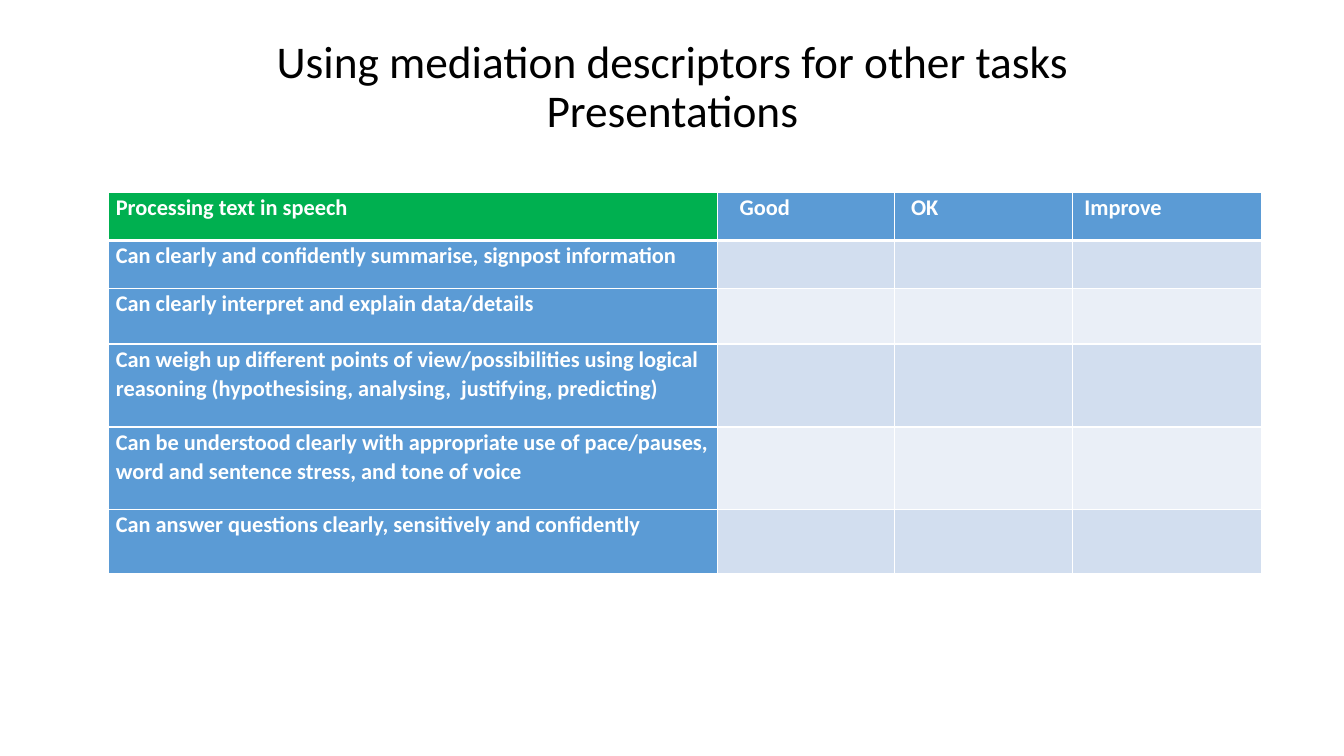
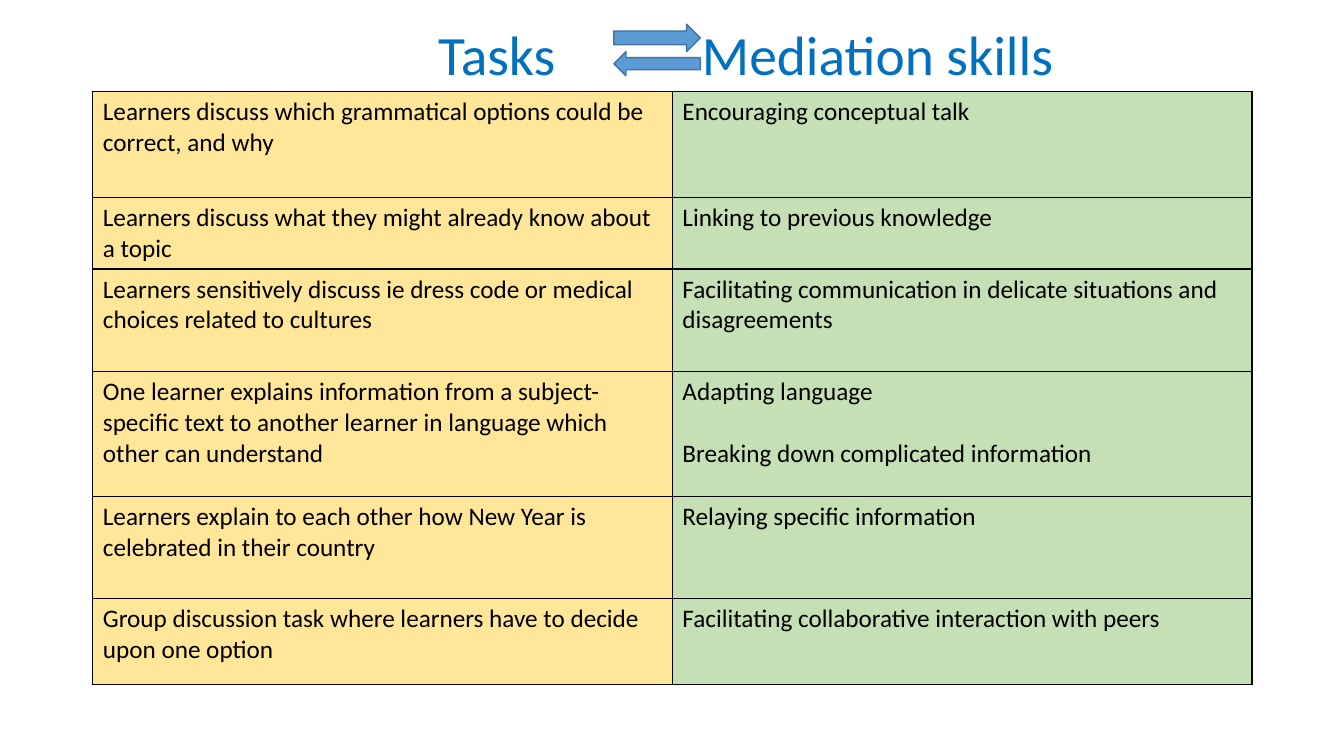
from collections import namedtuple

from lxml import etree
from pptx import Presentation
from pptx import util as u
from pptx.dml.color import RGBColor
from pptx.enum import shapes, text
from pptx.oxml import ns

Box = namedtuple("Box", "left top width height")
Border = namedtuple("Border", "color points")

FONT = "Calibri"
BLACK, WHITE = "000000", "FFFFFF"
BLUE, DARK_BLUE, TITLE_BLUE = "5B9BD5", "43739E", "0070C0"
GREEN, PALE_GREEN, YELLOW = "00B050", "C5E0B4", "FFE699"
BANDS = ["D2DEEF", "EAEFF7"]
TITLE_LEFT, TITLE_WIDTH = 2.34, 29.21

RATINGS = [("Good", 0.56), ("OK", 0.41), ("Improve", 0.31)]
DESCRIPTORS = [
    ("Can clearly and confidently summarise, signpost information", 1.21),
    ("Can clearly interpret and explain data/details", 1.4),
    ("Can weigh up different points of view/possibilities using logical "
     "reasoning (hypothesising, analysing,  justifying, predicting)", 2.09),
    ("Can be understood clearly with appropriate use of pace/pauses, "
     "word and sentence stress, and tone of voice", 2.08),
    ("Can answer questions clearly, sensitively and confidently", 1.62),
]
TASKS = [
    ("Learners discuss which grammatical options could be correct, and why",
     "Encouraging conceptual talk", 2.66),
    ("Learners discuss what they might already know about a topic",
     "Linking to previous knowledge", 1.81),
    ("Learners sensitively discuss ie dress code or medical choices related to cultures",
     "Facilitating communication in delicate situations and disagreements", 2.58),
    ("One learner explains information from a subject-specific text to another "
     "learner in language which other can understand",
     "Adapting language\nBreaking down complicated information", 3.15),
    ("Learners explain to each other how New Year is celebrated in their country",
     "Relaying specific information", 2.57),
    ("Group discussion task where learners have to decide upon one option",
     "Facilitating collaborative interaction with peers", 2.17),
]


def rgb(color):
    return RGBColor.from_string(color)


def fill_solid(target, color):
    target.fill.solid()
    target.fill.fore_color.rgb = rgb(color)


def format_runs(para, size, color, bold=False):
    for span in para.runs:
        span.font.name = FONT
        span.font.size = u.Pt(size)
        span.font.bold = bold
        span.font.color.rgb = rgb(color)


def add_title(page, box, words, size, color, align):
    title = page.shapes.title
    title.left, title.top, title.width, title.height = (u.Cm(side) for side in box)
    frame = title.text_frame
    frame.text = words
    frame.word_wrap = True
    frame.auto_size = text.MSO_AUTO_SIZE.NONE
    frame.vertical_anchor = text.MSO_ANCHOR.MIDDLE
    para = frame.paragraphs[0]
    para.alignment = align
    para.line_spacing = 0.9
    format_runs(para, size, color)
    return frame


def add_tab_stop(para, position):
    stops = etree.SubElement(para._p.get_or_add_pPr(), ns.qn("a:tabLst"))
    etree.SubElement(stops, ns.qn("a:tab"), pos=str(u.Cm(position)), algn="l")


def set_borders(cell, borders):
    properties = cell._tc.get_or_add_tcPr()
    for index, side in enumerate("LRTB"):
        border = borders[side]
        line = etree.Element(ns.qn("a:ln" + side), w=str(u.Pt(border.points)))
        solid = etree.SubElement(line, ns.qn("a:solidFill"))
        etree.SubElement(solid, ns.qn("a:srgbClr"), val=border.color)
        properties.insert(index, line)


def add_grid(page, left, top, widths, heights):
    frame = page.shapes.add_table(
        len(heights), len(widths), u.Cm(left), u.Cm(top),
        u.Cm(sum(widths)), u.Cm(sum(heights)))
    grid = frame.table
    grid.first_row = grid.horz_banding = False
    for column, width in zip(grid.columns, widths):
        column.width = u.Cm(width)
    for row, height in zip(grid.rows, heights):
        row.height = u.Cm(height)
    return grid


def style_cell(cell, words, fill, borders, size, color, bold=False):
    cell.text = words
    fill_solid(cell, fill)
    set_borders(cell, borders)
    for para in cell.text_frame.paragraphs:
        format_runs(para, size, color, bold)


def add_checklist(page, left, top):
    heights = [1.21] + [height for _, height in DESCRIPTORS]
    grid = add_grid(page, left, top, [15.34, 4.47, 4.47, 4.78], heights)
    thin, thick = Border(WHITE, 1), Border(WHITE, 3)
    labels = [("Processing text in speech", 0.18)] + RATINGS
    rows = [labels] + [[(words, 0.18)] + [("", 0.18)] * 3 for words, _ in DESCRIPTORS]
    for r, row in enumerate(rows):
        borders = {"L": thin, "R": thin,
                   "T": thick if r == 1 else thin,
                   "B": thick if r == 0 else thin}
        for c, (words, indent) in enumerate(row):
            fill = BLUE if r == 0 or c == 0 else BANDS[(r - 1) % 2]
            if r == c == 0:
                fill = GREEN
            cell = grid.cell(r, c)
            style_cell(cell, words, fill, borders, 16, WHITE, bold=True)
            cell.margin_left, cell.margin_right = u.Cm(indent), u.Cm(0.18)
            cell.margin_top = cell.margin_bottom = 0
            cell.text_frame.paragraphs[0].line_spacing = 1.07


def add_task_table(page, left, top):
    grid = add_grid(page, left, top, [TITLE_WIDTH / 2] * 2, [row[-1] for row in TASKS])
    borders = dict.fromkeys("LRTB", Border(BLACK, 1))
    for r, (task, skill, _) in enumerate(TASKS):
        for c, (words, fill) in enumerate([(task, YELLOW), (skill, PALE_GREEN)]):
            cell = grid.cell(r, c)
            style_cell(cell, words, fill, borders, 18, BLACK)
            for para in cell.text_frame.paragraphs[:-1]:
                para.space_after = u.Pt(22)


def add_exchange_arrows(page, box):
    upper = 0.69
    parts = [(box.top, upper, 0), (box.top + upper, box.height - upper, 180)]
    for top, height, turn in parts:
        arrow = page.shapes.add_shape(
            shapes.MSO_SHAPE.RIGHT_ARROW, u.Cm(box.left), u.Cm(top),
            u.Cm(box.width), u.Cm(height))
        arrow.rotation = turn
        arrow.shadow.inherit = False
        fill_solid(arrow, BLUE)
        arrow.line.color.rgb = rgb(DARK_BLUE)
        arrow.line.width = u.Pt(1)


def build_presentations_page(page):
    add_title(page, Box(TITLE_LEFT, 1.02, TITLE_WIDTH, 2.41),
              "Using mediation descriptors for other tasks\vPresentations",
              32.4, BLACK, text.PP_ALIGN.CENTER)
    add_checklist(page, 2.74, 4.85)


def build_skills_page(page):
    box = Box(TITLE_LEFT, 0.61, TITLE_WIDTH, 1.7)
    frame = add_title(page, box, "Tasks\tMediation skills",
                      39.6, TITLE_BLUE, text.PP_ALIGN.LEFT)
    frame.margin_left = u.Cm(8.7)
    add_tab_stop(frame.paragraphs[0], 6.65)
    add_task_table(page, box.left, box.top + box.height)
    add_exchange_arrows(page, Box(box.left + 13.13, box.top, 2.18, 1.3))


def main():
    deck = Presentation()
    deck.slide_width, deck.slide_height = u.Cm(33.87), u.Cm(19.05)
    for build in (build_presentations_page, build_skills_page):
        build(deck.slides.add_slide(deck.slide_layouts[5]))
    deck.save("out.pptx")


if __name__ == "__main__":
    main()
